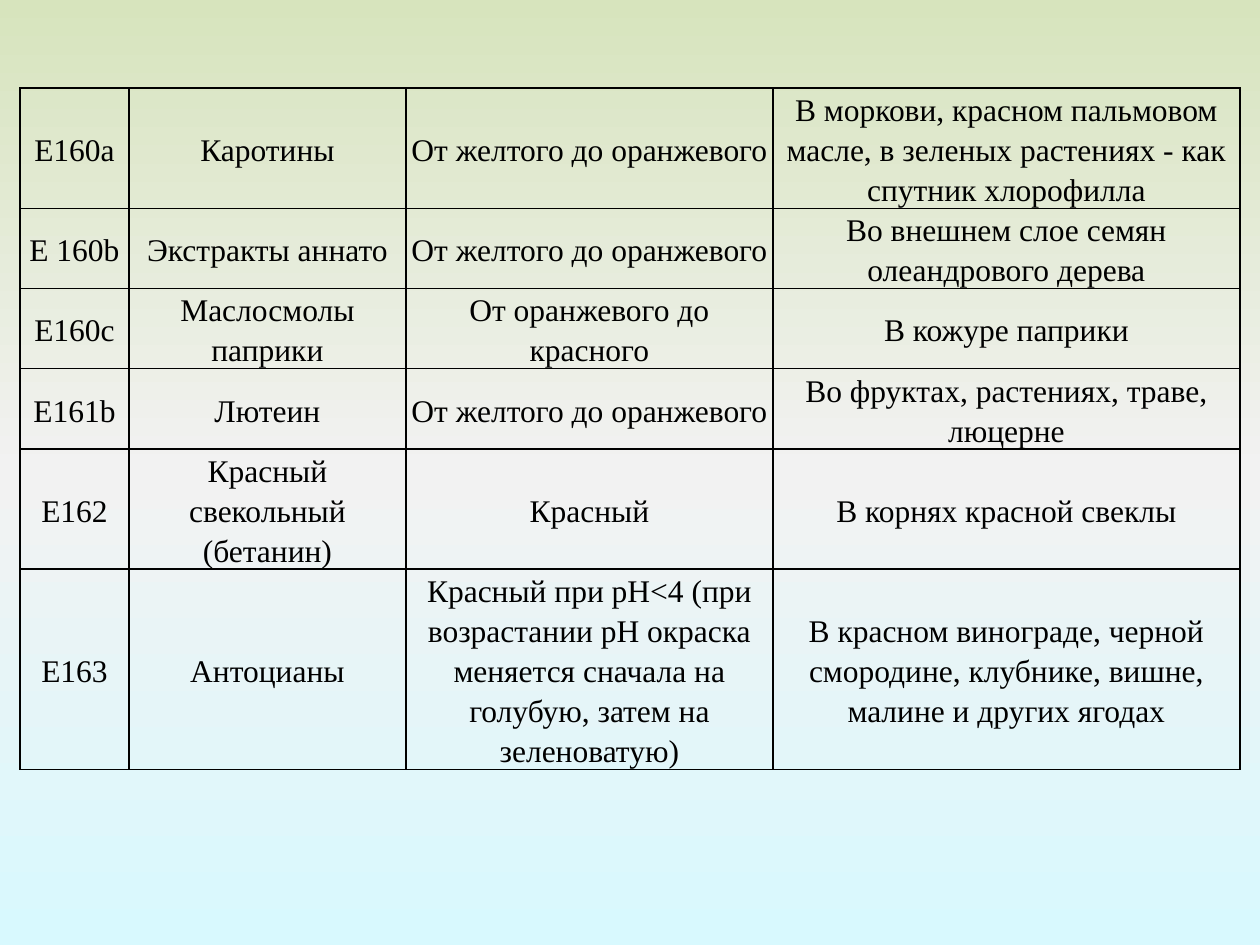
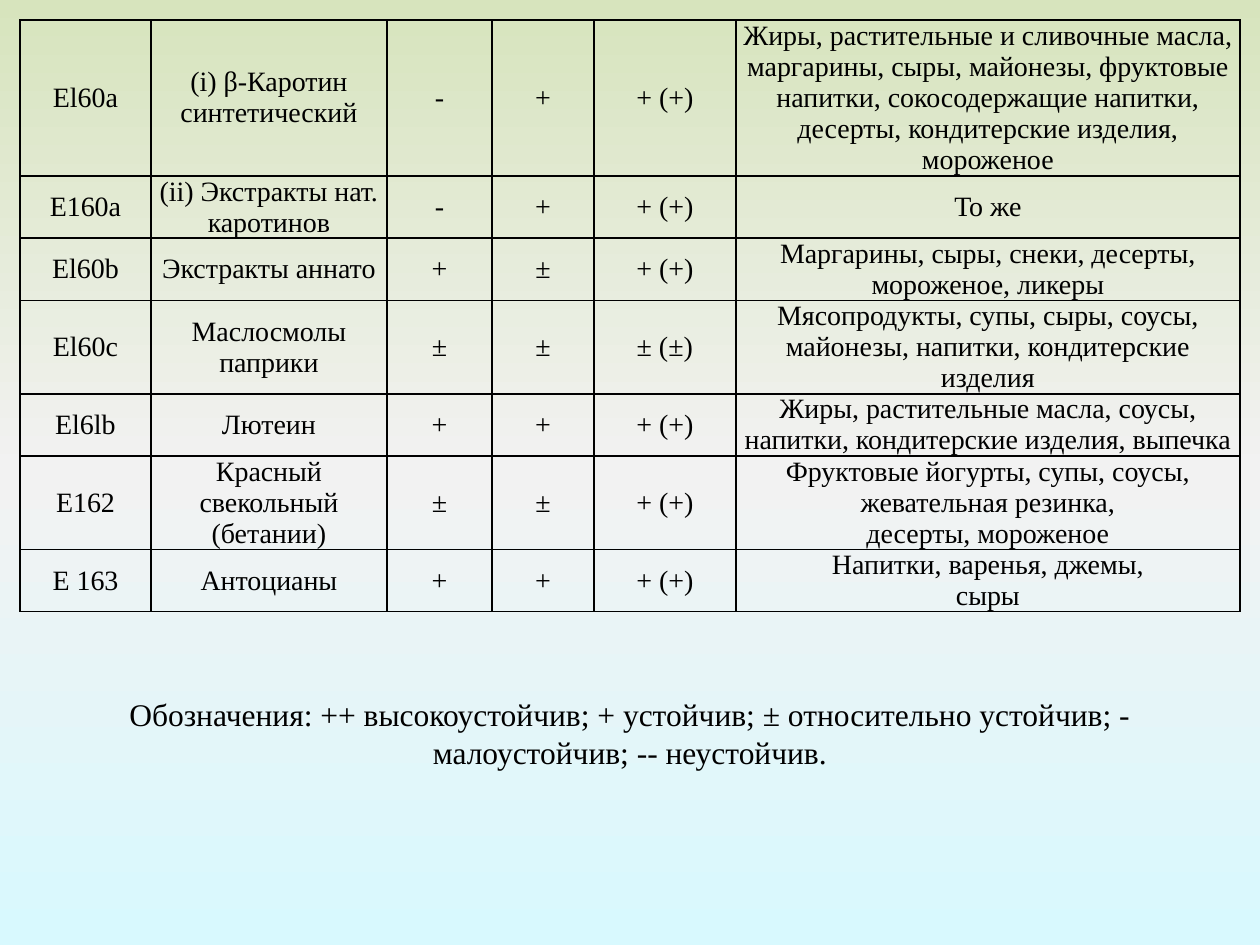
"""Two slides of tables on natural food colourings."""
from copy import deepcopy
from dataclasses import dataclass

from lxml import etree
from pptx import Presentation
from pptx import util as u
from pptx.dml.color import RGBColor
from pptx.enum import text
from pptx.oxml.ns import qn


@dataclass(frozen=True)
class Theme:
    ink: str = "000000"
    gradient: tuple = ((0, "D7E4BD"), (0.5, "F2F2F2"), (1, "D8F9FE"))
    font: str = "Times New Roman"
    body: int = 18
    small: int = 16
    border: int = 1


SCALE = 914400 / 126
WIDTH, HEIGHT, LEFT = 1260, 945, 20

SOURCES = [
    ("Е160а", "Каротины", "От желтого до оранжевого",
     "В моркови, красном пальмовом масле, в зеленых растениях - как спутник хлорофилла"),
    ("Е 160b", "Экстракты аннато", "От желтого до оранжевого",
     "Во внешнем слое семян олеандрового дерева"),
    ("Е160с", "Маслосмолы паприки", "От оранжевого до красного", "В кожуре паприки"),
    ("Е161b", "Лютеин", "От желтого до оранжевого", "Во фруктах, растениях, траве, люцерне"),
    ("Е162", "Красный свекольный (бетанин)", "Красный", "В корнях красной свеклы"),
    ("Е163", "Антоцианы",
     "Красный при рН<4 (при возрастании рН окраска меняется сначала на голубую, "
     "затем на зеленоватую)",
     "В красном винограде, черной смородине, клубнике, вишне, малине и других ягодах"),
]

STABILITY = [
    ("El60a", "(i) β-Каротин синтетический", "-", "+", "+ (+)",
     "Жиры, растительные и сливочные масла, маргарины, сыры, майонезы, фруктовые напитки, "
     "сокосодержащие напитки, десерты, кондитерские изделия, мороженое"),
    ("E160a", "(ii) Экстракты нат. каротинов", "-", "+", "+ (+)", "То же"),
    ("El60b", "Экстракты аннато", "+", "±", "+ (+)",
     "Маргарины, сыры, снеки, десерты, мороженое, ликеры"),
    ("El60c", "Маслосмолы паприки", "±", "±", "± (±)",
     "Мясопродукты, супы, сыры, соусы, майонезы, напитки, кондитерские изделия"),
    ("El6lb", "Лютеин", "+", "+", "+ (+)",
     "Жиры, растительные масла, соусы, напитки, кондитерские изделия, выпечка"),
    ("E162", "Красный\nсвекольный (бетании)", "±", "±", "+ (+)",
     "Фруктовые йогурты, супы, соусы, жевательная резинка,\nдесерты, мороженое"),
    ("E 163", "Антоцианы", "+", "+", "+ (+)", "Напитки, варенья, джемы,\nсыры"),
]

LEGEND = ("Обозначения: ++ высокоустойчив; + устойчив; ± относительно устойчив; "
          "- малоустойчив; -- неустойчив.")


def px(n):
    return u.Emu(round(n * SCALE))


def write(tf, content, *, theme, size, spacing=None):
    for i, line in enumerate(content.split("\n")):
        p = tf.add_paragraph() if i else tf.paragraphs[0]
        p.alignment = text.PP_ALIGN.CENTER
        p.line_spacing = spacing
        r = p.add_run()
        r.text = line
        r.font.name = theme.font
        r.font.size = u.Pt(size)
        r.font.color.rgb = RGBColor.from_string(theme.ink)


class Deck:
    def __init__(self, theme):
        self.theme = theme
        self.prs = Presentation()
        self.prs.slide_width, self.prs.slide_height = px(WIDTH), px(HEIGHT)
        self.s = None

    def slide(self):
        self.s = self.prs.slides.add_slide(self.prs.slide_layouts[6])
        fill = self.s.background.fill
        fill.gradient()
        fill.gradient_angle = 270
        stops = self.s.element.find(".//" + qn("a:gsLst"))
        stops.append(deepcopy(stops[-1]))
        for stop, (position, colour) in zip(fill.gradient_stops, self.theme.gradient):
            stop.position = position
            stop.color.rgb = RGBColor.from_string(colour)

    def borders(self, cell):
        tc_pr = cell._tc.get_or_add_tcPr()
        for side in ("lnL", "lnR", "lnT", "lnB"):
            ln = etree.SubElement(tc_pr, qn(f"a:{side}"), w=str(u.Pt(self.theme.border)))
            solid = etree.SubElement(ln, qn("a:solidFill"))
            etree.SubElement(solid, qn("a:srgbClr"), val=self.theme.ink)

    def table(self, top, widths, heights, rows, *, size, inset, spacing=None):
        table = self.s.shapes.add_table(len(rows), len(widths), px(LEFT), px(top),
                                        px(sum(widths)), px(sum(heights))).table
        table.first_row = table.horz_banding = False
        for column, width in zip(table.columns, widths):
            column.width = px(width)
        for row, height, values in zip(table.rows, heights, rows):
            row.height = px(height)
            for cell, value in zip(row.cells, values):
                cell.margin_left = cell.margin_right = px(inset)
                cell.margin_top = cell.margin_bottom = 0
                cell.vertical_anchor = text.MSO_ANCHOR.MIDDLE
                self.borders(cell)
                cell.fill.background()
                write(cell.text_frame, value, theme=self.theme, size=size, spacing=spacing)

    def textbox(self, top, width, height, content, *, size):
        tf = self.s.shapes.add_textbox(px(LEFT), px(top), px(width), px(height)).text_frame
        tf.word_wrap = True
        tf.auto_size = text.MSO_AUTO_SIZE.SHAPE_TO_FIT_TEXT
        write(tf, content, theme=self.theme, size=size)


def main():
    theme = Theme()
    deck = Deck(theme)

    deck.slide()
    deck.table(88, (109, 277, 367, 467), (120, 80, 80, 80, 120, 200), SOURCES,
               size=theme.body, inset=2, spacing=1.15)

    deck.slide()
    deck.table(20, (131, 236, 105, 102, 142, 504), (156, 62, 62, 93, 62, 93, 62), STABILITY,
               size=theme.small, inset=1)
    deck.textbox(689, 1220, 89, LEGEND, size=theme.body)

    deck.prs.save("out.pptx")


if __name__ == "__main__":
    main()
